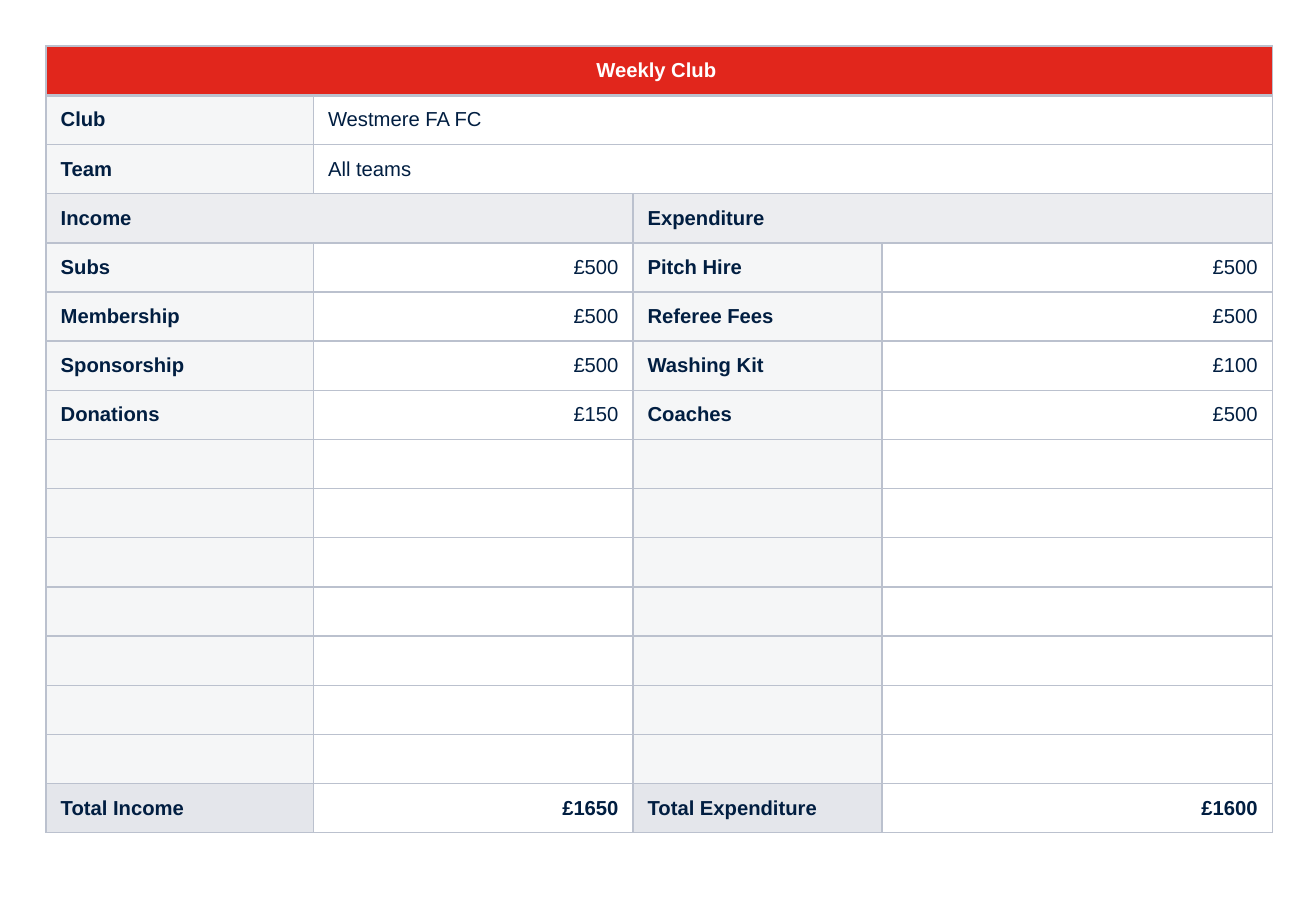
"""Build the weekly club income and expenditure slide."""
from dataclasses import dataclass
from typing import Optional

from lxml.etree import SubElement
from pptx import Presentation
from pptx.dml.color import RGBColor
from pptx.enum.text import MSO_ANCHOR, PP_ALIGN
from pptx.oxml.ns import qn
from pptx.table import Table, _Cell
from pptx.util import Emu, Pt

EMU_PER_PX = 4572
SLIDE_SIZE = (2166, 1500)
TABLE_LEFT, TABLE_TOP = 76, 76
COLUMN_WIDTHS = (440, 526, 410, 642)
ROW_HEIGHT = 81
MARGIN_X, MARGIN_Y = 24, 12


@dataclass(frozen=True)
class Theme:
    font: str = "Arial"
    text_size: int = 12
    navy: str = "011E41"
    white: str = "FFFFFF"
    red: str = "E1261C"
    label: str = "F1F3F5"
    section: str = "E4E6EB"
    border: str = "BBC1CE"
    border_width: int = 1
    header_rule_width: int = 2
    opacity: int = 70


THEME = Theme()


@dataclass(frozen=True)
class CellStyle:
    fill: str
    bold: bool = False
    align: Optional[PP_ALIGN] = None
    color: str = THEME.navy
    opacity: int = THEME.opacity
    bottom_width: int = THEME.border_width


@dataclass(frozen=True)
class Entry:
    text: str
    style: CellStyle
    span: int = 1


HEADER = CellStyle(THEME.red, True, PP_ALIGN.CENTER, THEME.white, 100, THEME.header_rule_width)
LABEL = CellStyle(THEME.label, True)
DETAIL = CellStyle(THEME.white)
SECTION = CellStyle(THEME.section, True)
AMOUNT = CellStyle(THEME.white, False, PP_ALIGN.RIGHT)
TOTAL_LABEL = CellStyle(THEME.section, True, opacity=100)
TOTAL_AMOUNT = CellStyle(THEME.white, True, PP_ALIGN.RIGHT, opacity=100)

BLANK_ROWS = 7
LEDGER = [
    ("Subs", "£500", "Pitch Hire", "£500"),
    ("Membership", "£500", "Referee Fees", "£500"),
    ("Sponsorship", "£500", "Washing Kit", "£100"),
    ("Donations", "£150", "Coaches", "£500"),
] + [("", "", "", "")] * BLANK_ROWS
TOTALS = ("Total Income", "£1650", "Total Expenditure", "£1600")


def px(length: int) -> Emu:
    """Turn px into EMU."""
    return Emu(length * EMU_PER_PX)


def pair_row(texts: tuple[str, ...], label: CellStyle, amount: CellStyle) -> list[Entry]:
    """Alternate label and amount styles along a row."""
    return [Entry(text, style) for text, style in zip(texts, (label, amount) * 2)]


def build_rows() -> list[list[Entry]]:
    """List the entries of every table row."""
    return [
        [Entry("Weekly Club ", HEADER, 4)],
        [Entry("Club", LABEL), Entry("Westmere FA FC", DETAIL, 3)],
        [Entry("Team", LABEL), Entry("All teams", DETAIL, 3)],
        [Entry("Income", SECTION, 2), Entry("Expenditure", SECTION, 2)],
        *(pair_row(texts, LABEL, AMOUNT) for texts in LEDGER),
        pair_row(TOTALS, TOTAL_LABEL, TOTAL_AMOUNT),
    ]


def set_borders(cell: _Cell, bottom_width: int) -> None:
    """Draw the four sides of a cell."""
    properties = cell._tc.get_or_add_tcPr()
    for index, side in enumerate(("lnL", "lnR", "lnT", "lnB")):
        width = bottom_width if side == "lnB" else THEME.border_width
        line = SubElement(properties, qn(f"a:{side}"), w=str(Pt(width)))
        SubElement(SubElement(line, qn("a:solidFill")), qn("a:srgbClr"), val=THEME.border)
        properties.insert(index, line)


def set_fill(cell: _Cell, style: CellStyle) -> None:
    """Fill a cell with its colour and opacity."""
    cell.fill.solid()
    cell.fill.fore_color.rgb = RGBColor.from_string(style.fill)
    if style.opacity < 100:
        color = cell._tc.tcPr.find(f".//{qn('a:solidFill')}/{qn('a:srgbClr')}")
        SubElement(color, qn("a:alpha"), val=str(style.opacity * 1000))


def write_text(cell: _Cell, entry: Entry) -> None:
    """Set the text of a cell with its margins and font."""
    cell.margin_left = cell.margin_right = px(MARGIN_X)
    cell.margin_top = cell.margin_bottom = px(MARGIN_Y)
    cell.vertical_anchor = MSO_ANCHOR.MIDDLE
    cell.text = entry.text
    paragraph = cell.text_frame.paragraphs[0]
    paragraph.alignment = entry.style.align
    font = paragraph.font
    font.name = THEME.font
    font.size = Pt(THEME.text_size)
    font.bold = entry.style.bold
    font.color.rgb = RGBColor.from_string(entry.style.color)


def draw_row(table: Table, row: int, entries: list[Entry]) -> None:
    """Draw the entries of one row from left to right."""
    column = 0
    for entry in entries:
        last = column + entry.span - 1
        if entry.span > 1:
            table.cell(row, column).merge(table.cell(row, last))
        write_text(table.cell(row, column), entry)
        for position in range(column, last + 1):
            cell = table.cell(row, position)
            set_fill(cell, entry.style)
            set_borders(cell, entry.style.bottom_width)
        column = last + 1


def main() -> None:
    """Build and save the presentation."""
    presentation = Presentation()
    presentation.slide_width, presentation.slide_height = map(px, SLIDE_SIZE)
    slide = presentation.slides.add_slide(presentation.slide_layouts[6])
    rows = build_rows()
    table = slide.shapes.add_table(
        len(rows), len(COLUMN_WIDTHS), px(TABLE_LEFT), px(TABLE_TOP),
        px(sum(COLUMN_WIDTHS)), px(ROW_HEIGHT * len(rows)),
    ).table
    table.first_row = table.horz_banding = False
    for column, width in zip(table.columns, COLUMN_WIDTHS):
        column.width = px(width)
    for index, entries in enumerate(rows):
        table.rows[index].height = px(ROW_HEIGHT)
        draw_row(table, index, entries)
    presentation.save("out.pptx")


if __name__ == "__main__":
    main()
